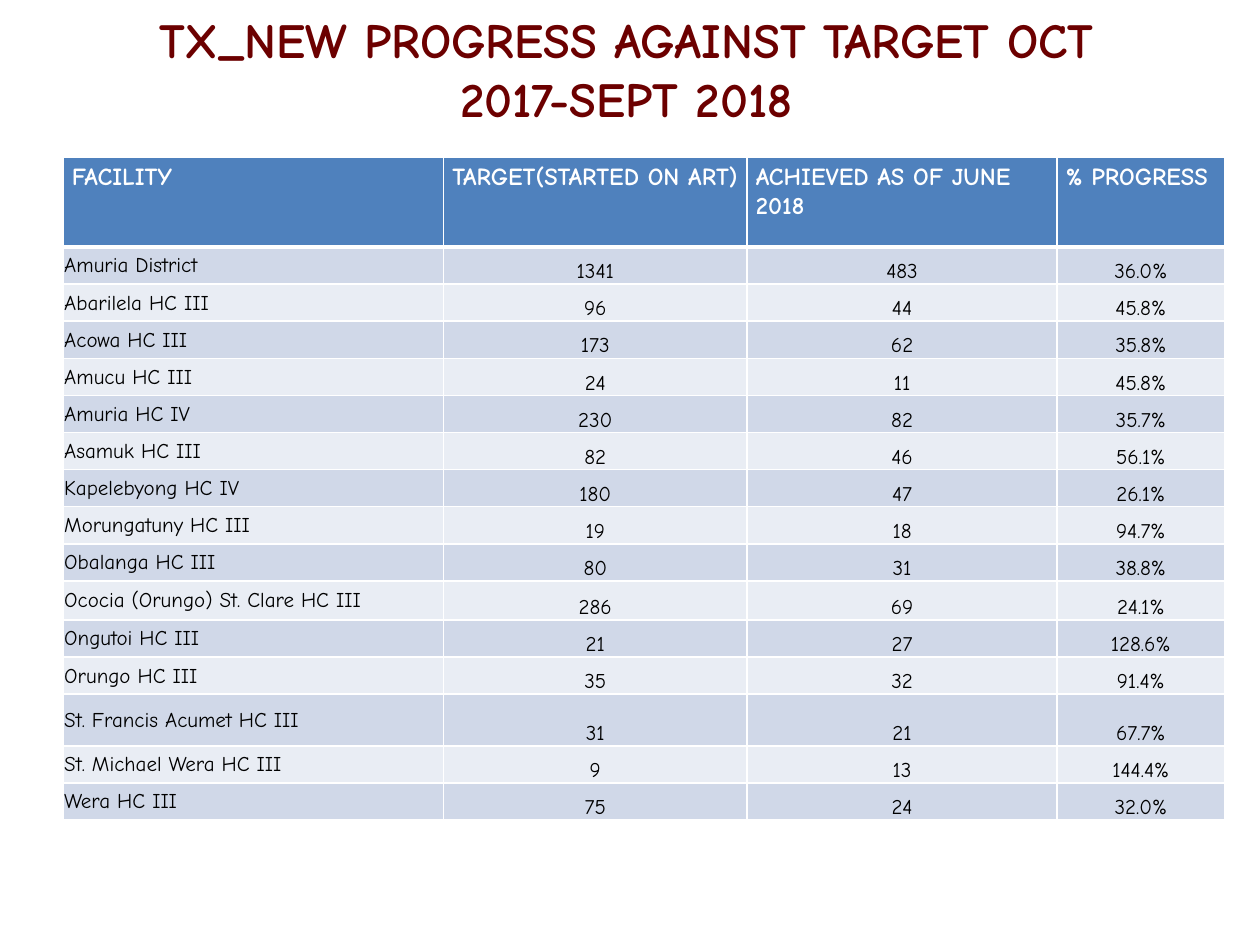
from lxml.etree import SubElement
from pptx import Presentation
from pptx.dml.color import RGBColor
from pptx.enum.text import MSO_ANCHOR as Anchor, PP_ALIGN as Align
from pptx.oxml.ns import qn
from pptx.util import Inches, Pt

FONT = "Comic Neue"
MAROON = RGBColor(0x6C, 0x00, 0x00)
WHITE = RGBColor(0xFF, 0xFF, 0xFF)
BLACK = RGBColor(0x00, 0x00, 0x00)
HEADER_BLUE = RGBColor(0x4F, 0x81, 0xBD)
BANDS = (RGBColor(0xD0, 0xD8, 0xE8), RGBColor(0xE9, 0xED, 0xF4))

TITLE = "TX_NEW PROGRESS AGAINST TARGET OCT 2017-SEPT 2018"
HEADINGS = ("FACILITY", "TARGET(STARTED ON ART)",
            "ACHIEVED AS OF JUNE 2018", "% PROGRESS")
# Facility, target, achieved; the progress column follows from the last two
FACILITIES = (
    ("Amuria District", 1341, 483),
    ("Abarilela HC III", 96, 44),
    ("Acowa HC III", 173, 62),
    ("Amucu HC III", 24, 11),
    ("Amuria HC IV", 230, 82),
    ("Asamuk HC III", 82, 46),
    ("Kapelebyong HC IV", 180, 47),
    ("Morungatuny HC III", 19, 18),
    ("Obalanga HC III", 80, 31),
    ("Ococia (Orungo) St. Clare HC III", 286, 69),
    ("Ongutoi HC III", 21, 27),
    ("Orungo HC III", 35, 32),
    ("St. Francis Acumet HC III", 31, 21),
    ("St. Michael Wera HC III", 9, 13),
    ("Wera HC III", 75, 24),
)

TABLE_HEIGHT = 5.26
COLUMN_WIDTHS = (3.02, 2.41, 2.46, 1.33)
SPECIAL_ROWS = {0: 0.71, 10: 0.31, 13: 0.41}  # the other rows share the rest


def style_text(para, size, color, bold, align):
    para.alignment = align
    font = para.font
    font.name, font.size, font.bold = FONT, Pt(size), bold
    font.color.rgb = color


def add_title(page):
    title = page.shapes.title
    title.left, title.top = Inches(0.66), 0
    title.width, title.height = Inches(8.62), Inches(1.08)
    frame = title.text_frame
    frame.text = TITLE
    frame.word_wrap = True
    frame.vertical_anchor = Anchor.MIDDLE
    style_text(frame.paragraphs[0], 28, MAROON, True, Align.CENTER)


def set_borders(cell, top=1, bottom=1):
    properties = cell._tc.get_or_add_tcPr()
    for side, width in (("L", 1), ("R", 1), ("T", top), ("B", bottom)):
        line = SubElement(properties, qn(f"a:ln{side}"), w=str(Pt(width)))
        fill = SubElement(line, qn("a:solidFill"))
        SubElement(fill, qn("a:srgbClr"), val=str(WHITE))


def set_cell(cell, text, fill, margins, anchor):
    cell.text = text
    cell.margin_left, cell.margin_top, cell.margin_right, cell.margin_bottom = (
        Inches(margin) for margin in margins)
    cell.vertical_anchor = anchor
    cell.fill.solid()
    cell.fill.fore_color.rgb = fill
    return cell.text_frame.paragraphs[0]


def fill_header(table):
    for column, heading in enumerate(HEADINGS):
        cell = table.cell(0, column)
        set_borders(cell, bottom=3)
        para = set_cell(cell, heading, HEADER_BLUE,
                        (0.07, 0.05, 0.07, 0.05), Anchor.TOP)
        style_text(para, 14, WHITE, True, Align.LEFT)


def fill_facility(table, row, name, target, achieved):
    progress = f"{100 * achieved / target:.1f}%"
    for column, text in enumerate((name, str(target), str(achieved), progress)):
        cell = table.cell(row, column)
        set_borders(cell, top=3 if row == 1 else 1)
        is_name = column == 0
        para = set_cell(cell, text, BANDS[(row - 1) % 2],
                        (0.01, 0.01, 0.01, 0),
                        Anchor.MIDDLE if is_name else Anchor.BOTTOM)
        style_text(para, 12, BLACK, False,
                   Align.LEFT if is_name else Align.CENTER)


def add_progress_table(page):
    row_count = len(FACILITIES) + 1
    table = page.shapes.add_table(
        row_count, len(HEADINGS), Inches(0.5), Inches(1.25),
        Inches(sum(COLUMN_WIDTHS)), Inches(TABLE_HEIGHT)).table
    for column, width in zip(table.columns, COLUMN_WIDTHS):
        column.width = Inches(width)
    regular = ((TABLE_HEIGHT - sum(SPECIAL_ROWS.values()))
               / (row_count - len(SPECIAL_ROWS)))
    for index, row in enumerate(table.rows):
        row.height = Inches(SPECIAL_ROWS.get(index, regular))
    fill_header(table)
    for row, facility in enumerate(FACILITIES, start=1):
        fill_facility(table, row, *facility)


def main():
    deck = Presentation()
    deck.slide_width, deck.slide_height = Inches(10), Inches(7.5)
    page = deck.slides.add_slide(deck.slide_layouts[5])
    add_title(page)
    add_progress_table(page)
    deck.save("out.pptx")


if __name__ == "__main__":
    main()
